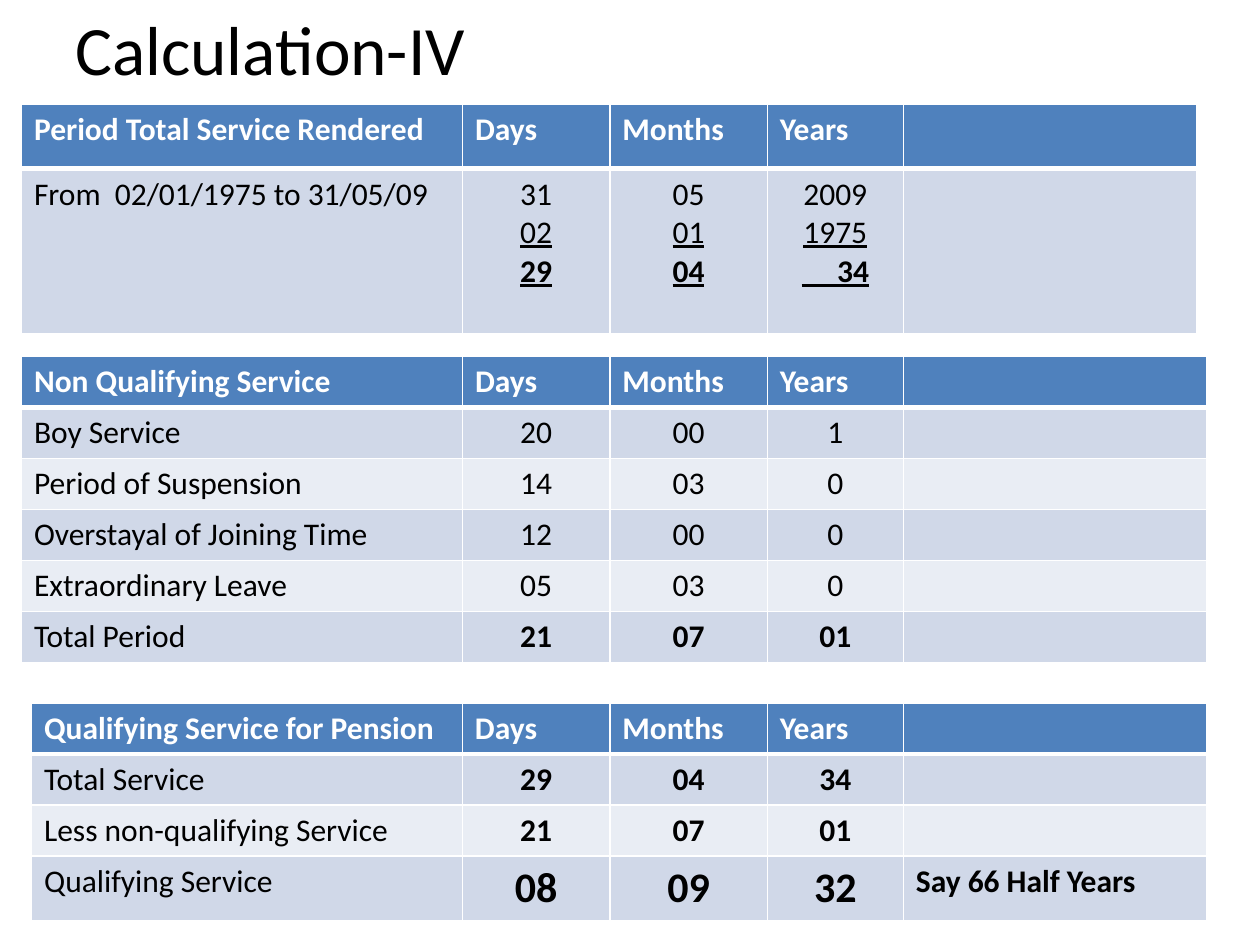
from lxml.etree import SubElement
from pptx import Presentation
from pptx.dml.color import RGBColor
from pptx.enum.text import MSO_ANCHOR as Anchor, PP_ALIGN as Align
from pptx.oxml.ns import qn
from pptx.util import Inches, Pt

COLORS = {
    "header": "4F81BD",
    "band_dark": "D0D8E8",
    "band_light": "E9EDF4",
    "white": "FFFFFF",
    "black": "000000",
}
FONT = "Calibri"
SLIDE_WIDTH, SLIDE_HEIGHT = 10, 7.5

# Shared grid: the unit columns line up in all three tables
LABEL_RIGHT = 3.67
UNITS = ["Days", "Months", "Years"]
UNIT_WIDTHS = [1.17, 1.25, 1.08]
ROW_HEIGHT = 0.405
TALL_ROW = 0.51


def color(name):
    return RGBColor.from_string(COLORS[name])


def format_runs(paragraph, size, color_name, bold=False, underline=False):
    for run in paragraph.runs:
        font = run.font
        font.name, font.size = FONT, Pt(size)
        font.bold, font.underline = bold, underline
        font.color.rgb = color(color_name)


def add_title(slide, text):
    box = slide.shapes.add_textbox(
        Inches(0.05 * SLIDE_WIDTH), 0,
        Inches(0.9 * SLIDE_WIDTH), Inches(0.1 * SLIDE_HEIGHT))
    frame = box.text_frame
    frame.word_wrap = True
    frame.vertical_anchor = Anchor.MIDDLE
    frame.text = text
    format_runs(frame.paragraphs[0], 39.6, "black")


def set_borders(cell, row):
    """White rules, thicker between the header and the body."""
    widths = {"L": 1, "R": 1, "T": 3 if row == 1 else 1, "B": 3 if row == 0 else 1}
    properties = cell._tc.get_or_add_tcPr()
    for side, width in widths.items():
        line = SubElement(properties, qn(f"a:ln{side}"), w=str(Pt(width)))
        fill = SubElement(line, qn("a:solidFill"))
        SubElement(fill, qn("a:srgbClr"), val=COLORS["white"])


def fill_cell(cell, row, column, text, size, bold):
    set_borders(cell, row)
    band = "band_dark" if row % 2 else "band_light"
    cell.fill.solid()
    cell.fill.fore_color.rgb = color("header" if row == 0 else band)
    cell.text_frame.text = text
    is_value = row > 0 and 1 <= column <= len(UNITS)
    # In a stacked subtraction the lower lines are underlined, the result bold
    for index, paragraph in enumerate(cell.text_frame.paragraphs):
        paragraph.alignment = Align.CENTER if is_value else Align.LEFT
        format_runs(paragraph, size if is_value else 18,
                    "white" if row == 0 else "black",
                    bold=row == 0 or index == 2 or (bold and column > 0),
                    underline=index > 0)


def add_service_table(slide, left, top, right, heading, body, heights,
                      bold_rows=(), large_rows=()):
    rows = [[heading, *UNITS, ""]] + body
    label_width = LABEL_RIGHT - left
    last_width = right - LABEL_RIGHT - sum(UNIT_WIDTHS)
    widths = [label_width, *UNIT_WIDTHS, last_width]
    table = slide.shapes.add_table(
        len(rows), len(widths), Inches(left), Inches(top),
        Inches(right - left), Inches(sum(heights))).table
    table.horz_banding = False
    for column, width in zip(table.columns, widths):
        column.width = Inches(width)
    for table_row, height in zip(table.rows, heights):
        table_row.height = Inches(height)
    for row, texts in enumerate(rows):
        size = 24 if row in large_rows else 18
        for column, text in enumerate(texts):
            fill_cell(table.cell(row, column), row, column, text, size,
                      row in bold_rows)


def main():
    presentation = Presentation()
    presentation.slide_width = Inches(SLIDE_WIDTH)
    presentation.slide_height = Inches(SLIDE_HEIGHT)
    slide = presentation.slides.add_slide(presentation.slide_layouts[6])

    add_title(slide, "Calculation-IV")

    # Total service
    add_service_table(
        slide, 0.17, 0.83, 9.5, "Period Total Service Rendered",
        [["From  02/01/1975 to 31/05/09", "31\n02\n29", "05\n01\n04",
          "2009\n1975\n     34", ""]],
        heights=[TALL_ROW, 1.31])

    # Service that does not count
    add_service_table(
        slide, 0.17, 2.83, 9.58, "Non Qualifying Service",
        [["Boy Service", "20", "00", "1", ""],
         ["Period of Suspension", "14", "03", "0", ""],
         ["Overstayal of Joining Time", "12", "00", "0", ""],
         ["Extraordinary Leave", "05", "03", "0", ""],
         ["Total Period", "21", "07", "01", ""]],
        heights=[ROW_HEIGHT] * 6, bold_rows=[5])

    # Service that counts for pension
    add_service_table(
        slide, 0.25, 5.58, 9.58, "Qualifying Service for Pension",
        [["Total Service", "29", "04", "34", ""],
         ["Less non-qualifying Service", "21", "07", "01", ""],
         ["Qualifying Service", "08", "09", "32", "Say 66 Half Years"]],
        heights=[ROW_HEIGHT] * 3 + [TALL_ROW],
        bold_rows=[1, 2, 3], large_rows=[3])

    presentation.save("out.pptx")


if __name__ == "__main__":
    main()
